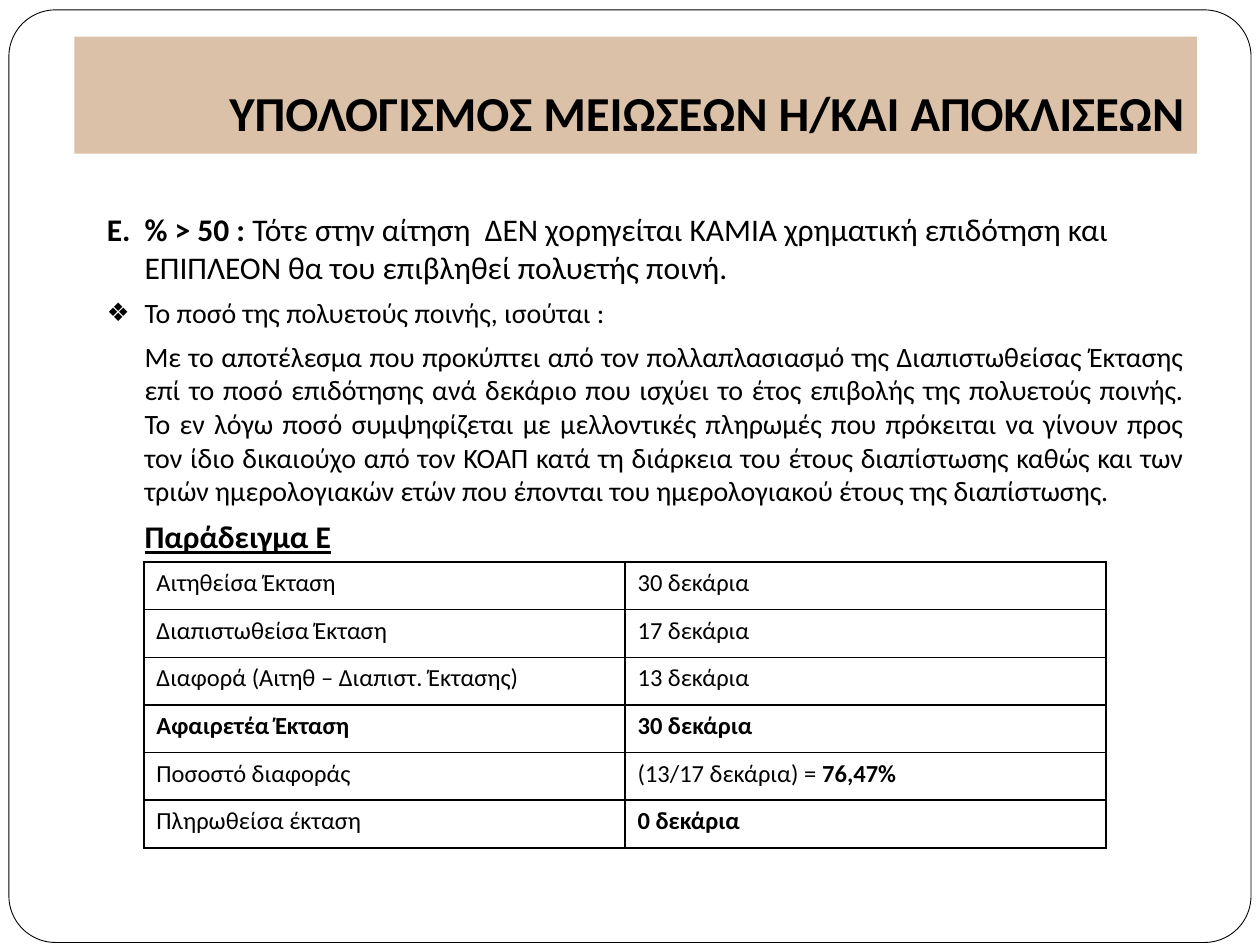
"""Build the slide on reductions and exclusions with its worked example."""
from lxml import etree
from pptx import Presentation
from pptx.dml.color import RGBColor
from pptx.enum.shapes import MSO_SHAPE
from pptx.enum.text import MSO_ANCHOR, MSO_AUTO_SIZE, PP_ALIGN
from pptx.oxml.ns import qn
from pptx.util import Cm, Pt

BLACK = RGBColor(0x00, 0x00, 0x00)
WHITE = RGBColor(0xFF, 0xFF, 0xFF)
SAND = RGBColor(0xDB, 0xC1, 0xA7)
FONT = "Calibri"
ROUNDED = MSO_SHAPE.ROUNDED_RECTANGLE
BOTTOM = MSO_ANCHOR.BOTTOM
NO_FIT = MSO_AUTO_SIZE.NONE
LEFT, RIGHT, JUSTIFY = PP_ALIGN.LEFT, PP_ALIGN.RIGHT, PP_ALIGN.JUSTIFY
INDENT = Cm(0.76)

TITLE = "ΥΠΟΛΟΓΙΣΜΟΣ ΜΕΙΩΣΕΩΝ Ή/ΚΑΙ ΑΠΟΚΛΙΣΕΩΝ"
RULE = "Ε.\t% ˃ 50 :"
RULE_TEXT = (
    " Τότε στην αίτηση  ΔΕΝ χορηγείται ΚΑΜΙΑ χρηματική επιδότηση και "
    "ΕΠΙΠΛΕΟΝ θα του επιβληθεί πολυετής ποινή."
)
PENALTY = "Το ποσό της πολυετούς ποινής, ισούται :"
PENALTY_TEXT = (
    "Με το αποτέλεσμα που προκύπτει από τον πολλαπλασιασμό της Διαπιστωθείσας "
    "Έκτασης επί το ποσό επιδότησης ανά δεκάριο που ισχύει το έτος επιβολής της "
    "πολυετούς ποινής. Το εν λόγω ποσό συμψηφίζεται με μελλοντικές πληρωμές που "
    "πρόκειται να γίνουν προς τον ίδιο δικαιούχο από τον ΚΟΑΠ κατά τη διάρκεια του "
    "έτους διαπίστωσης καθώς και των τριών ημερολογιακών ετών που έπονται του "
    "ημερολογιακού έτους της διαπίστωσης."
)
EXAMPLE = "Παράδειγμα Ε"
ROWS = [
    ([("Αιτηθείσα Έκταση", False)], [("30 δεκάρια", False)]),
    ([("Διαπιστωθείσα Έκταση", False)], [("17 δεκάρια", False)]),
    ([("Διαφορά (Αιτηθ – Διαπιστ. Έκτασης)", False)], [("13 δεκάρια", False)]),
    ([("Αφαιρετέα Έκταση", True)], [("30 δεκάρια", True)]),
    ([("Ποσοστό διαφοράς", False)], [("(13/17 δεκάρια) = ", False), ("76,47%", True)]),
    ([("Πληρωθείσα έκταση", False)], [("0 δεκάρια", True)]),
]


def place(sp, left, top, width, height):
    """Move and size a shape, in centimetres."""
    sp.left, sp.top, sp.width, sp.height = map(Cm, (left, top, width, height))


def write_runs(p, runs, size, underline=None):
    """Add (text, bold) runs to a paragraph."""
    for text, bold in runs:
        r = p.add_run()
        r.text = text
        r.font.name = FONT
        r.font.size = Pt(size)
        r.font.bold = bold
        r.font.underline = underline
        r.font.color.rgb = BLACK


def add_frame(s):
    """Put the rounded frame behind everything else."""
    sp = s.shapes.add_shape(ROUNDED, Cm(0.18), Cm(0.2), Cm(25.04), Cm(18.8))
    sp.adjustments[0] = 0.05
    sp.shadow.inherit = False
    sp.fill.solid()
    sp.fill.fore_color.rgb = WHITE
    sp.line.color.rgb = BLACK
    sp.line.width = Pt(0.5)
    sp._element.getparent().insert(2, sp._element)


def fill_title(s):
    """Format the title placeholder as a sand band."""
    sp = s.shapes.title
    place(sp, 1.5, 0.74, 22.63, 2.36)
    sp.fill.solid()
    sp.fill.fore_color.rgb = SAND
    tf = sp.text_frame
    tf.auto_size = NO_FIT
    tf.vertical_anchor = BOTTOM
    tf.margin_bottom = Cm(0.25)
    p = tf.paragraphs[0]
    p.alignment = RIGHT
    write_runs(p, [(TITLE, True)], 27.9)


def set_bullet(p, bullet, hanging):
    """Set the indent and the bullet of a paragraph."""
    pPr = p._p.get_or_add_pPr()
    pPr.set("marL", str(INDENT))
    pPr.set("indent", str(-INDENT if hanging else 0))
    if bullet:
        etree.SubElement(pPr, qn("a:buSzPct"), val="91000")
        etree.SubElement(pPr, qn("a:buFont"), typeface="Arial")
        etree.SubElement(pPr, qn("a:buChar"), char=bullet)
    else:
        etree.SubElement(pPr, qn("a:buNone"))


def fill_body(s):
    """Write the rule and its explanation in the body placeholder."""
    sp = s.placeholders[1]
    place(sp, 1.9, 3.12, 22.23, 14.2)
    tf = sp.text_frame
    tf.auto_size = NO_FIT
    tf.margin_top = Cm(1.11)
    items = [
        ([(RULE, True), (RULE_TEXT, False)], 18, LEFT, None, True, None),
        ([(PENALTY, False)], 16, JUSTIFY, "❖", True, None),
        ([(PENALTY_TEXT, False)], 16, JUSTIFY, None, False, None),
        ([(EXAMPLE, True)], 18, LEFT, None, False, True),
    ]
    for i, (runs, size, align, bullet, hanging, underline) in enumerate(items):
        p = tf.add_paragraph() if i else tf.paragraphs[0]
        p.alignment = align
        p.space_before = Pt(5.8)
        set_bullet(p, bullet, hanging)
        write_runs(p, runs, size, underline)


def set_borders(cell):
    """Draw a thin black line on each side of a cell."""
    tcPr = cell._tc.get_or_add_tcPr()
    for i, side in enumerate(("a:lnL", "a:lnR", "a:lnT", "a:lnB")):
        ln = etree.Element(qn(side), w=str(Pt(1)))
        fill = etree.SubElement(ln, qn("a:solidFill"))
        etree.SubElement(fill, qn("a:srgbClr"), val=str(BLACK))
        tcPr.insert(i, ln)


def add_example_table(s):
    """Add the table of the worked example."""
    table = s.shapes.add_table(
        len(ROWS), 2, Cm(2.9), Cm(11.33), Cm(19.4), Cm(5.76)
    ).table
    table.first_row = False
    table.horz_banding = False
    for i, row in enumerate(ROWS):
        for j, runs in enumerate(row):
            cell = table.cell(i, j)
            cell.fill.background()
            set_borders(cell)
            write_runs(cell.text_frame.paragraphs[0], runs, 14)


def main():
    """Build and save the slide."""
    prs = Presentation()
    prs.slide_width, prs.slide_height = Cm(25.4), Cm(19.05)
    s = prs.slides.add_slide(prs.slide_layouts[1])
    add_frame(s)
    fill_title(s)
    fill_body(s)
    add_example_table(s)
    prs.save("out.pptx")


if __name__ == "__main__":
    main()
